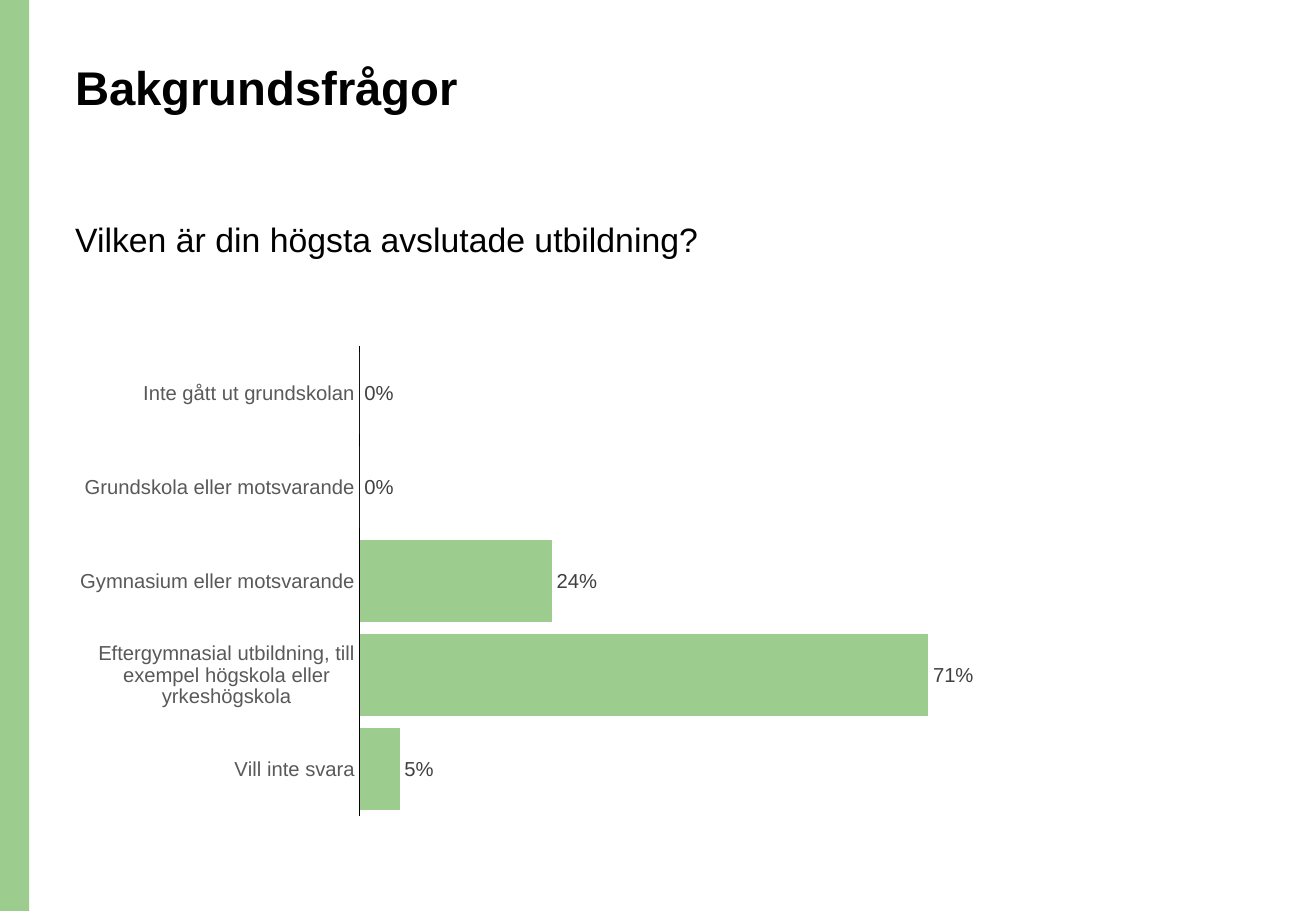
from lxml import etree
from pptx import Presentation
from pptx.chart.data import CategoryChartData
from pptx.dml.color import RGBColor
from pptx.enum.chart import XL_CHART_TYPE as ChartType
from pptx.enum.chart import XL_LABEL_POSITION as LabelPosition
from pptx.enum.chart import XL_TICK_MARK as TickMark
from pptx.enum.shapes import MSO_SHAPE as ShapeType
from pptx.enum.text import MSO_ANCHOR as Anchor
from pptx.oxml.ns import qn
from pptx.util import Inches, Pt

GREEN = RGBColor(0x9D, 0xCC, 0x8F)
BLACK = RGBColor(0, 0, 0)
LABEL_GRAY = RGBColor(0x59, 0x59, 0x59)
VALUE_GRAY = RGBColor(0x40, 0x40, 0x40)

EDUCATION_SHARES = {
    "Inte gått ut grundskolan": 0,
    "Grundskola eller motsvarande": 0,
    "Gymnasium eller motsvarande": 0.24,
    "Eftergymnasial utbildning, till exempel högskola eller yrkeshögskola": 0.71,
    "Vill inte svara": 0.05,
}


class SlideBuilder:
    font_name = "Arial"

    def __init__(self, slide):
        self.slide = slide

    def style_font(self, font, size, color, bold=False):
        font.name = self.font_name
        font.size = Pt(size)
        font.bold = bold
        font.color.rgb = color

    def add_band(self, left, top, width, height, color):
        shape = self.slide.shapes.add_shape(
            ShapeType.RECTANGLE, Inches(left), Inches(top), Inches(width), Inches(height))
        shape.shadow.inherit = False
        shape.fill.solid()
        shape.fill.fore_color.rgb = color
        shape.line.fill.background()

    def add_text(self, text, left, top, width, height, size, bold=False):
        box = self.slide.shapes.add_textbox(
            Inches(left), Inches(top), Inches(width), Inches(height))
        frame = box.text_frame
        frame.word_wrap = True
        frame.vertical_anchor = Anchor.TOP
        paragraph = frame.paragraphs[0]
        paragraph.text = text
        paragraph.line_spacing = 0.9
        self.style_font(paragraph.font, size, BLACK, bold)

    def add_bar_chart(self, shares, left, top, width, height):
        data = CategoryChartData(number_format="0%")
        data.categories = list(shares)
        data.add_series("Series 1", list(shares.values()))
        chart = self.slide.shapes.add_chart(
            ChartType.BAR_CLUSTERED, Inches(left), Inches(top),
            Inches(width), Inches(height), data).chart
        chart.has_legend = False
        chart.has_title = False
        self.style_font(chart.font, 10, BLACK)

        category_axis = chart.category_axis
        category_axis.reverse_order = True
        category_axis.major_tick_mark = TickMark.NONE
        category_axis.minor_tick_mark = TickMark.NONE
        category_axis.has_major_gridlines = False
        category_axis.format.line.color.rgb = BLACK
        category_axis.format.line.width = Pt(0.75)
        self.style_font(category_axis.tick_labels.font, 12, LABEL_GRAY)

        value_axis = chart.value_axis
        value_axis.has_major_gridlines = False
        value_axis.minimum_scale = 0
        value_axis.maximum_scale = 0.8
        value_axis.visible = False

        plot = chart.plots[0]
        plot.gap_width = 15
        plot.vary_by_categories = False
        series = plot.series[0]
        series.format.fill.solid()
        series.format.fill.fore_color.rgb = GREEN
        labels = series.data_labels
        labels.show_value = True
        labels.number_format = "0%"
        labels.number_format_is_linked = False
        labels.position = LabelPosition.OUTSIDE_END
        self.style_font(labels.font, 12, VALUE_GRAY)
        self.place_plot(chart, x=0.31, y=0.02, w=0.67, h=0.96)

    def place_plot(self, chart, **fractions):
        """Fix the inner plot area as fractions of the chart's size."""
        plot_area = chart.plots[0]._element.getparent()
        for old_layout in plot_area.findall(qn("c:layout")):
            plot_area.remove(old_layout)
        layout = etree.Element(qn("c:layout"))
        manual = etree.SubElement(layout, qn("c:manualLayout"))
        settings = {"layoutTarget": "inner", "xMode": "edge", "yMode": "edge", **fractions}
        for name, value in settings.items():
            etree.SubElement(manual, qn(f"c:{name}")).set("val", str(value))
        plot_area.insert(0, layout)


def main():
    presentation = Presentation()
    presentation.slide_width = Inches(10.83)
    presentation.slide_height = Inches(7.5)
    builder = SlideBuilder(presentation.slides.add_slide(presentation.slide_layouts[6]))
    builder.add_band(0, 0, 0.24, 7.5, GREEN)
    builder.add_text("Vilken är din högsta avslutade utbildning?", 0.52, 1.79, 6.03, 0.74, 20)
    builder.add_text("Bakgrundsfrågor", 0.52, 0.48, 9.34, 1.02, 28, bold=True)
    builder.add_bar_chart(EDUCATION_SHARES, 0.52, 2.77, 7.87, 4.03)
    presentation.save("out.pptx")


if __name__ == "__main__":
    main()
